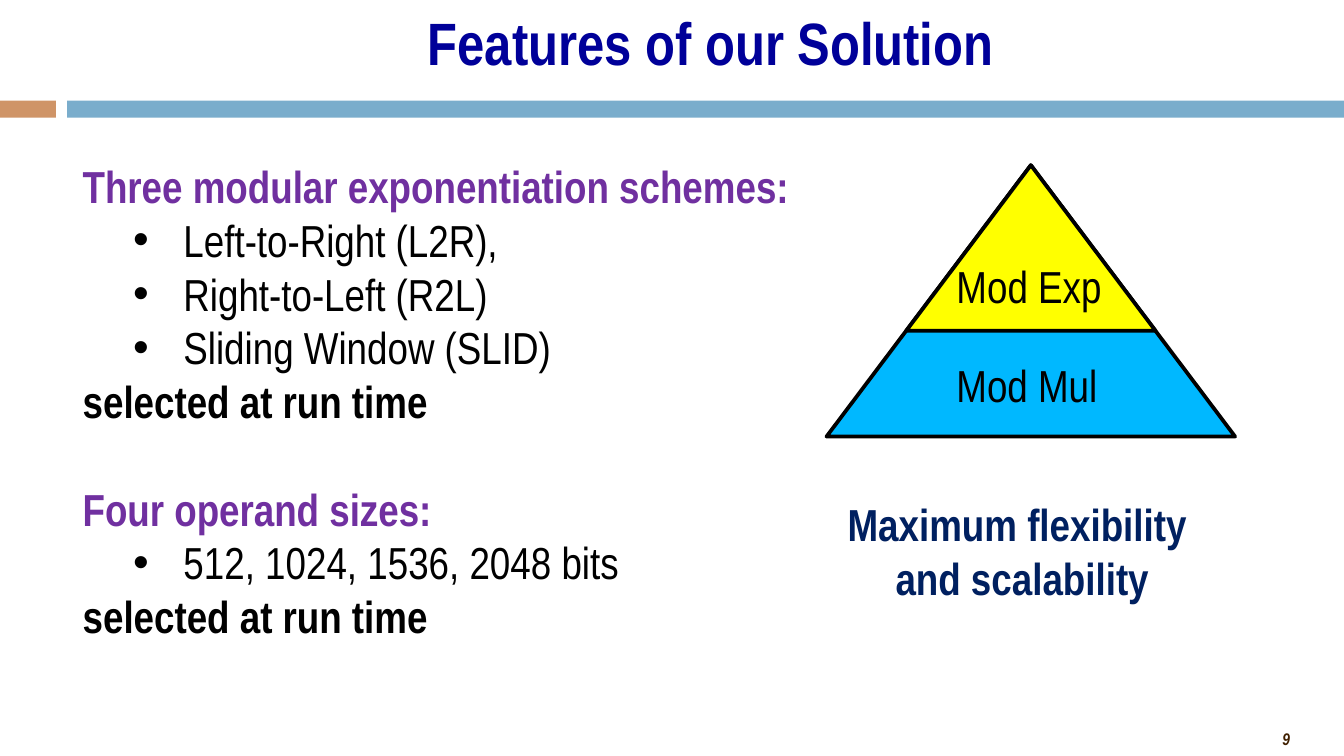
from pptx import Presentation
from pptx.dml.color import RGBColor
from pptx.enum.shapes import MSO_SHAPE
from pptx.enum.text import MSO_ANCHOR, MSO_AUTO_SIZE, PP_ALIGN
from pptx.oxml.xmlchemy import OxmlElement
from pptx.util import Pt

BLACK = RGBColor(0, 0, 0)
NAVY = RGBColor(0, 0, 0x99)
INK = RGBColor(0, 0x20, 0x60)
PURPLE = RGBColor(0x70, 0x30, 0xA0)
BROWN = RGBColor(0x40, 0x20, 0)
CLAY = RGBColor(0xCF, 0x94, 0x67)
STEEL = RGBColor(0x7A, 0xAD, 0xCC)
AQUA = RGBColor(0, 0xB8, 0xFF)
YELLOW = RGBColor(0xFF, 0xFF, 0)

FACE = "Arial Narrow"
HEAD = {"bold": True, "color": PURPLE}
ITEM = {"bold": False, "color": BLACK}
CLOSE = {"bold": True, "color": BLACK}
GAP = 28.8


def style(font, look):
    base = {"name": FACE, "size": Pt(24)}
    for key, value in (base | look).items():
        if key == "color":
            font.color.rgb = value
        else:
            setattr(font, key, value)


def write(frame, lines, align=PP_ALIGN.LEFT):
    for i, (text, look) in enumerate(lines):
        para = frame.add_paragraph() if i else frame.paragraphs[0]
        para.alignment = align
        run = para.add_run()
        run.text = text
        style(run.font, look)


def add_text(slide, box, lines, align=PP_ALIGN.LEFT):
    frame = slide.shapes.add_textbox(*map(Pt, box)).text_frame
    frame.word_wrap = False
    frame.auto_size = MSO_AUTO_SIZE.SHAPE_TO_FIT_TEXT
    write(frame, lines, align)
    return frame


def add_solid(slide, kind, box, fill, edge=None):
    shape = slide.shapes.add_shape(kind, *map(Pt, box))
    shape.shadow.inherit = False
    shape.fill.solid()
    shape.fill.fore_color.rgb = fill
    if edge is None:
        shape.line.fill.background()
    else:
        shape.line.color.rgb = edge
        shape.line.width = Pt(2)


def add_bullet(para):
    props = para._p.get_or_add_pPr()
    props.set("marL", str(Pt(54)))
    props.set("indent", str(Pt(-27)))
    for tag, key, value in (("a:buFont", "typeface", "Arial"), ("a:buChar", "char", "•")):
        mark = OxmlElement(tag)
        mark.set(key, value)
        props.append(mark)


def add_title(slide, box, text):
    title = slide.shapes.title
    for key, value in zip(("left", "top", "width", "height"), box):
        setattr(title, key, Pt(value))
    frame = title.text_frame
    frame.word_wrap = True
    frame.auto_size = MSO_AUTO_SIZE.NONE
    frame.vertical_anchor = MSO_ANCHOR.MIDDLE
    write(frame, [(text, {"size": Pt(32), "bold": True, "color": NAVY})])
    frame.paragraphs[0].line_spacing = 0.94


def add_band(slide, box):
    left, top, width, height = box
    add_solid(slide, MSO_SHAPE.RECTANGLE, (left, top, 30, height), CLAY)
    add_solid(slide, MSO_SHAPE.RECTANGLE, (left + 36, top, width - 36, height), STEEL)


def add_points(slide, box, groups):
    lines = []
    for head, items, close in groups:
        lines += [(head, HEAD), *((item, ITEM) for item in items), (close, CLOSE)]
    frame = add_text(slide, box, lines)
    for i, (para, (_, look)) in enumerate(zip(frame.paragraphs, lines)):
        if look is ITEM:
            para.level = 1
            add_bullet(para)
        elif look is HEAD and i:
            para.space_before = Pt(GAP)


def add_peak(slide, box, upper, lower):
    left, top, width, height = box
    share = 0.61
    inner = (left + width * (1 - share) / 2, top, width * share, height * share)
    add_solid(slide, MSO_SHAPE.ISOSCELES_TRIANGLE, box, AQUA, BLACK)
    add_solid(slide, MSO_SHAPE.ISOSCELES_TRIANGLE, inner, YELLOW, BLACK)
    for text, drop, span in ((upper, 46.5, 93), (lower, 99.5, 91)):
        add_text(slide, (left + 62.5, top + drop, span, 36), [(text, ITEM)])


def add_claim(slide, box, lines):
    look = {"bold": True, "color": INK}
    add_text(slide, box, [(line, look) for line in lines], PP_ALIGN.CENTER)


def add_number(slide, box, text):
    look = {"size": Pt(9), "bold": True, "italic": True, "color": BROWN}
    frame = add_text(slide, box, [(text, look)], PP_ALIGN.RIGHT)
    frame.word_wrap = True
    for side, value in {"left": 5, "top": 3, "right": 5, "bottom": 3}.items():
        setattr(frame, f"margin_{side}", Pt(value))


def main():
    deck = Presentation()
    deck.slide_width, deck.slide_height = Pt(720), Pt(405)
    slide = deck.slides.add_slide(deck.slide_layouts[5])
    add_number(slide, (540, 387.5, 156, 16.5), "9")
    add_band(slide, (0, 54, 720, 9))
    add_title(slide, (222, 7, 371, 35), "Features of our Solution")
    add_peak(slide, (442.8, 88.5, 218.9, 145.4), "Mod Exp", "Mod Mul")
    close = "selected at run time"
    schemes = ["Left-to-Right (L2R),", "Right-to-Left (R2L)", "Sliding Window (SLID)"]
    add_points(slide, (37.2, 81.5, 402.5, 285), [
        ("Three modular exponentiation schemes:", schemes, close),
        ("Four operand sizes:", ["512, 1024, 1536, 2048 bits"], close),
    ])
    add_claim(slide, (445.7, 262.8, 203.8, 65.5), ["Maximum flexibility ", "and scalability"])
    deck.save("out.pptx")


if __name__ == "__main__":
    main()
